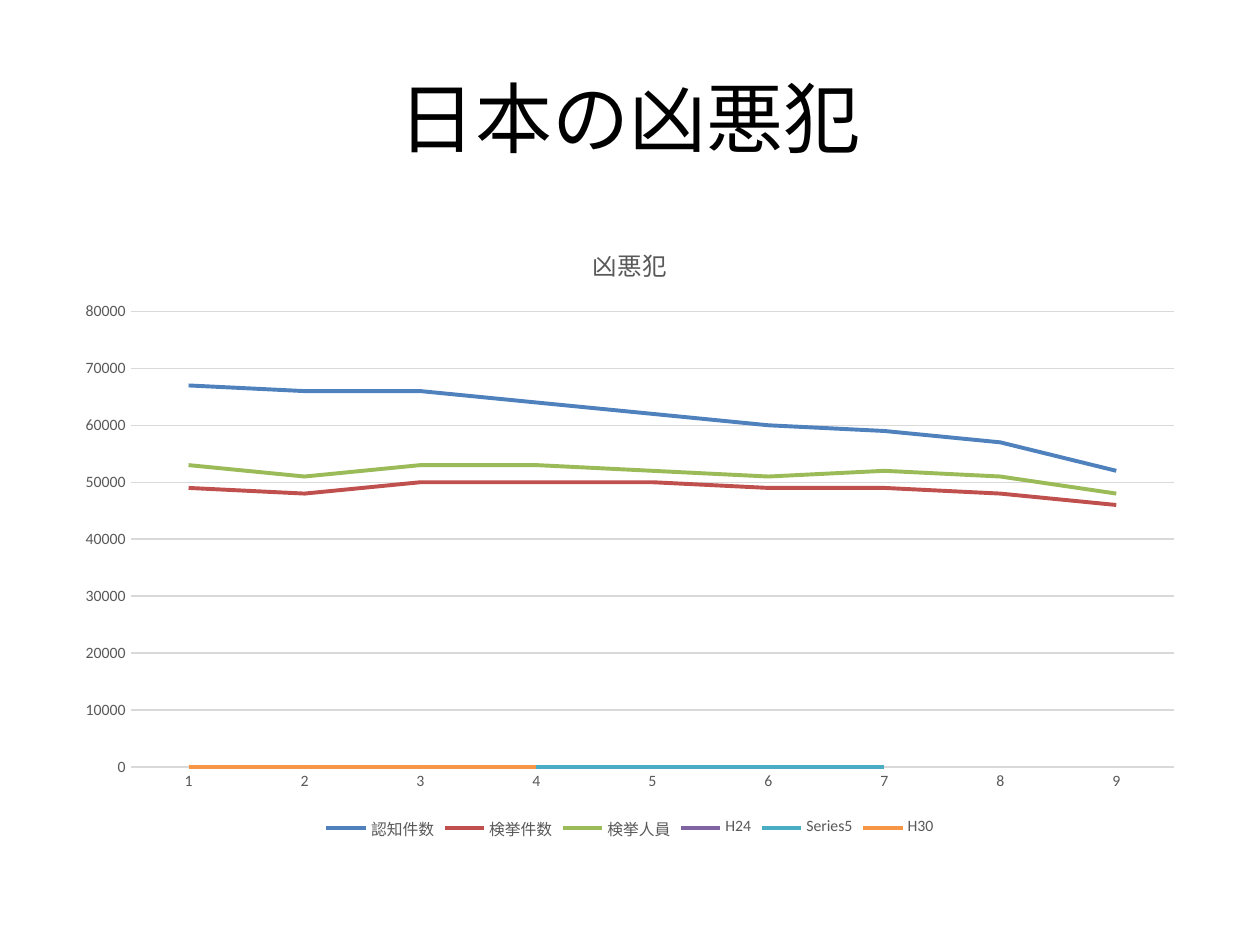
from pptx import Presentation
from pptx.chart.data import CategoryChartData
from pptx.dml.color import RGBColor
from pptx.enum.chart import XL_CHART_TYPE, XL_LEGEND_POSITION, XL_TICK_MARK
from pptx.enum.text import MSO_ANCHOR, PP_ALIGN
from pptx.util import Inches, Pt

BLACK = RGBColor(0x00, 0x00, 0x00)
GRAY = RGBColor(0x59, 0x59, 0x59)
LIGHT_GRAY = RGBColor(0xD9, 0xD9, 0xD9)
BLUE = RGBColor(0x4F, 0x81, 0xBD)
RED = RGBColor(0xC0, 0x50, 0x4D)
GREEN = RGBColor(0x9B, 0xBB, 0x59)
PURPLE = RGBColor(0x80, 0x64, 0xA2)
TEAL = RGBColor(0x4B, 0xAC, 0xC6)
ORANGE = RGBColor(0xF7, 0x96, 0x46)

TITLE = "日本の凶悪犯"
CHART_TITLE = "凶悪犯"
CATEGORIES = [str(number) for number in range(1, 10)]
SERIES = [
    ("認知件数", BLUE, [67000, 66000, 66000, 64000, 62000, 60000, 59000, 57000, 52000]),
    ("検挙件数", RED, [49000, 48000, 50000, 50000, 50000, 49000, 49000, 48000, 46000]),
    ("検挙人員", GREEN, [53000, 51000, 53000, 53000, 52000, 51000, 52000, 51000, 48000]),
    ("H24", PURPLE, [0] * 2),
    ("Series5", TEAL, [0] * 7),
    ("H30", ORANGE, [0] * 4),
]
TITLE_BOX = [Inches(length) for length in (0.5, 0.3, 9, 1.25)]
CHART_BOX = [Inches(length) for length in (0.5, 1.75, 9, 4.95)]

TITLE_FONT = {"name": "Calibri", "size": Pt(44), "color": BLACK}
CHART_FONT = {"name": "Calibri", "size": Pt(10), "color": BLACK}
CHART_TITLE_FONT = {"name": "Calibri", "size": Pt(14), "bold": False, "color": GRAY}
LABEL_FONT = {"name": "Calibri", "size": Pt(9), "color": GRAY}


def format_font(font, values):
    for name, value in values.items():
        if name == "color":
            font.color.rgb = value
        else:
            setattr(font, name, value)


def format_line(line, color, width):
    line.color.rgb = color
    line.width = Pt(width)


def add_title(slide):
    title = slide.shapes.title
    title.left, title.top, title.width, title.height = TITLE_BOX
    frame = title.text_frame
    frame.vertical_anchor = MSO_ANCHOR.MIDDLE
    para = frame.paragraphs[0]
    para.alignment = PP_ALIGN.CENTER
    span = para.add_run()
    span.text = TITLE
    format_font(span.font, TITLE_FONT)


def add_crime_chart(slide):
    data = CategoryChartData()
    data.categories = CATEGORIES
    for name, _, values in SERIES:
        missing = len(CATEGORIES) - len(values)
        data.add_series(name, values + [None] * missing)
    chart = slide.shapes.add_chart(XL_CHART_TYPE.LINE, *CHART_BOX, data).chart
    format_font(chart.font, CHART_FONT)

    chart.has_title = True
    para = chart.chart_title.text_frame.paragraphs[0]
    span = para.add_run()
    span.text = CHART_TITLE
    format_font(span.font, CHART_TITLE_FONT)
    chart.chart_title.include_in_layout = False

    chart.has_legend = True
    chart.legend.position = XL_LEGEND_POSITION.BOTTOM
    chart.legend.include_in_layout = False
    format_font(chart.legend.font, LABEL_FONT)

    for axis in (chart.category_axis, chart.value_axis):
        axis.major_tick_mark = axis.minor_tick_mark = XL_TICK_MARK.NONE
        format_font(axis.tick_labels.font, LABEL_FONT)
    format_line(chart.category_axis.format.line, LIGHT_GRAY, 0.75)
    value_axis = chart.value_axis
    value_axis.minimum_scale, value_axis.maximum_scale = 0, 80000
    value_axis.major_unit = 10000
    value_axis.format.line.fill.background()
    value_axis.has_major_gridlines = True
    format_line(value_axis.major_gridlines.format.line, LIGHT_GRAY, 0.75)

    plot = chart.plots[0]
    plot.vary_by_categories = False
    for series, (_, color, _) in zip(plot.series, SERIES):
        series.smooth = False
        format_line(series.format.line, color, 2.25)


def main():
    deck = Presentation()
    deck.slide_width, deck.slide_height = Inches(10), Inches(7.5)
    slide = deck.slides.add_slide(deck.slide_layouts.get_by_name("Title Only"))
    add_title(slide)
    add_crime_chart(slide)
    deck.save("out.pptx")


if __name__ == "__main__":
    main()
